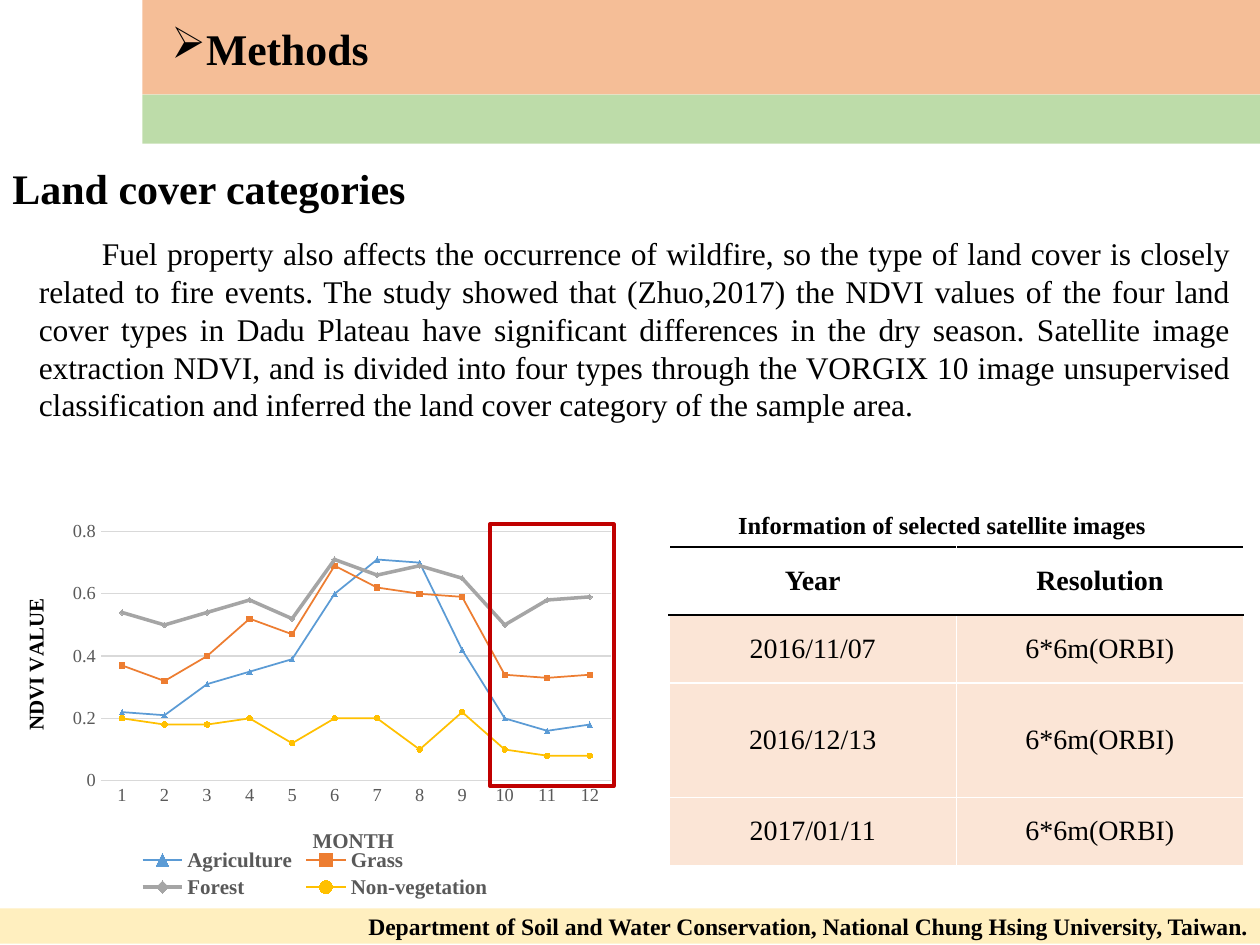
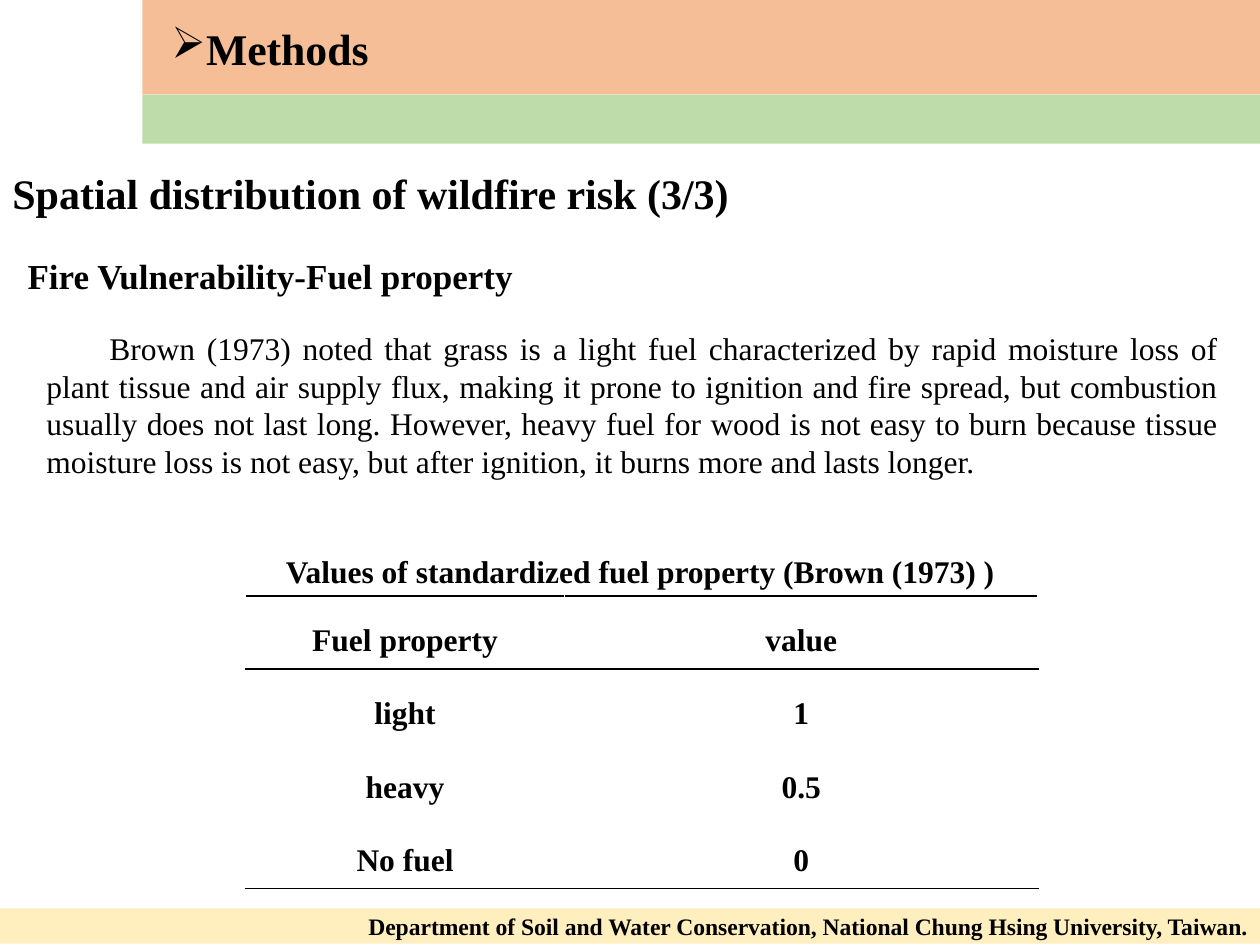
from pptx import Presentation
from pptx.chart.data import CategoryChartData
from pptx.dml.color import RGBColor
from pptx.enum.chart import XL_CHART_TYPE, XL_LEGEND_POSITION, XL_MARKER_STYLE, XL_TICK_MARK
from pptx.enum.shapes import MSO_SHAPE
from pptx.enum.text import MSO_ANCHOR, MSO_AUTO_SIZE, PP_ALIGN
from pptx.oxml.ns import qn
from pptx.oxml.xmlchemy import OxmlElement
from pptx.util import Inches, Pt

FONT = "Times New Roman"
BLACK = RGBColor(0x00, 0x00, 0x00)
WHITE = RGBColor(0xFF, 0xFF, 0xFF)
ORANGE = RGBColor(0xF4, 0xB1, 0x83)
GREEN = RGBColor(0xA9, 0xD1, 0x8E)
YELLOW = RGBColor(0xFF, 0xE6, 0x99)
PEACH = RGBColor(0xFB, 0xE5, 0xD6)
RED = RGBColor(0xC0, 0x00, 0x00)
GRAY = RGBColor(0x59, 0x59, 0x59)
LIGHT_GRAY = RGBColor(0xD9, 0xD9, 0xD9)

LEFT, RIGHT, CENTER, JUSTIFY = PP_ALIGN.LEFT, PP_ALIGN.RIGHT, PP_ALIGN.CENTER, PP_ALIGN.JUSTIFY
MIDDLE = MSO_ANCHOR.MIDDLE
RECTANGLE = MSO_SHAPE.RECTANGLE
NO_TICKS = XL_TICK_MARK.NONE
TITLE_ONLY = 5

# box (inches), colour, opacity (percent)
BANDS = [
    ((1.13, 0, 8.87, 0.75), ORANGE, 83),
    ((1.13, 0.75, 8.87, 0.39), GREEN, 76),
    ((0, 7.21, 10, 0.28), YELLOW, 62),
]
FOOTER = "Department of Soil and Water Conservation, National Chung Hsing University, Taiwan."

# name, monthly values, colour, line width (points), marker
NDVI_SERIES = [
    ("Agriculture", (0.22, 0.21, 0.31, 0.35, 0.39, 0.6, 0.71, 0.7, 0.42, 0.2, 0.16, 0.18),
     RGBColor(0x5B, 0x9B, 0xD5), 1, XL_MARKER_STYLE.TRIANGLE),
    ("Grass", (0.37, 0.32, 0.4, 0.52, 0.47, 0.69, 0.62, 0.6, 0.59, 0.34, 0.33, 0.34),
     RGBColor(0xED, 0x7D, 0x31), 1, XL_MARKER_STYLE.SQUARE),
    ("Forest", (0.54, 0.5, 0.54, 0.58, 0.52, 0.71, 0.66, 0.69, 0.65, 0.5, 0.58, 0.59),
     RGBColor(0xA5, 0xA5, 0xA5), 2, XL_MARKER_STYLE.DIAMOND),
    ("Non-vegetation", (0.2, 0.18, 0.18, 0.2, 0.12, 0.2, 0.2, 0.1, 0.22, 0.1, 0.08, 0.08),
     RGBColor(0xFF, 0xC0, 0x00), 1, XL_MARKER_STYLE.CIRCLE),
]

IMAGE_ROWS = [
    ("Year", "Resolution"),
    ("2016/11/07", "6*6m(ORBI)"),
    ("2016/12/13", "6*6m(ORBI)"),
    ("2017/01/11", "6*6m(ORBI)"),
]
FUEL_ROWS = [("Fuel property", "value"), ("light", "1"), ("heavy", "0.5"), ("No fuel", "0")]

LAND_COVER_TEXT = (
    "Fuel property also affects the occurrence of wildfire, so the type of land cover is closely "
    "related to fire events. The study showed that (Zhuo,2017) the NDVI values of the four land "
    "cover types in Dadu Plateau have significant differences in the dry season. Satellite image "
    "extraction NDVI, and is divided into four types through the VORGIX 10 image unsupervised "
    "classification and inferred the land cover category of the sample area."
)
FUEL_TEXT = (
    "Brown (1973) noted that grass is a light fuel characterized by rapid moisture loss of plant "
    "tissue and air supply flux, making it prone to ignition and fire spread, but combustion "
    "usually does not last long. However, heavy fuel for wood is not easy to burn because tissue "
    "moisture loss is not easy, but after ignition, it burns more and lasts longer."
)


def inches(box):
    return [Inches(value) for value in box]


def style_font(font, size, bold=False, color=BLACK):
    font.name = FONT
    font.size = Pt(size)
    font.bold = bold
    font.color.rgb = color


def add_text(slide, box, text, size, bold=True, align=LEFT):
    shape = slide.shapes.add_textbox(*inches(box))
    shape.text_frame.word_wrap = True
    shape.text_frame.text = text
    paragraph = shape.text_frame.paragraphs[0]
    paragraph.alignment = align
    style_font(paragraph.runs[0].font, size, bold)
    return shape


def add_body_text(slide, box, text):
    """Add a justified paragraph with an indented first line."""
    shape = add_text(slide, box, text, 18, bold=False, align=JUSTIFY)
    properties = shape.text_frame.paragraphs[0]._p.get_or_add_pPr()
    properties.set("indent", str(Inches(0.5)))


def add_band(slide, box, color, opacity):
    band = slide.shapes.add_shape(RECTANGLE, *inches(box))
    band.shadow.inherit = False
    band.fill.solid()
    band.fill.fore_color.rgb = color
    band.line.fill.background()
    alpha = OxmlElement("a:alpha")
    alpha.set("val", str(opacity * 1000))
    band.element.spPr.find(".//" + qn("a:srgbClr")).append(alpha)
    return band


def move_frame_to_layout(slide):
    """Make the bands and the footer, and hand them to the slide's layout."""
    frame = [add_band(slide, *band) for band in BANDS]
    frame.append(add_text(slide, (2.62, 7.19, 7.38, 0.33), FOOTER, 13.5, align=RIGHT))
    tree = slide.slide_layout.shapes.element
    for index, shape in enumerate(frame):
        shape.element.nvSpPr.cNvPr.set("id", str(100 + index))
        tree.insert(2 + index, shape.element)


def fill_title(slide, text):
    title = slide.shapes.title
    title.left, title.top, title.width, title.height = inches((1.26, 0.12, 7.57, 0.52))
    frame = title.text_frame
    frame.auto_size = MSO_AUTO_SIZE.NONE
    frame.vertical_anchor = MIDDLE
    frame.text = text
    paragraph = frame.paragraphs[0]
    paragraph.alignment = LEFT
    properties = paragraph._p.get_or_add_pPr()
    properties.set("marL", str(Inches(0.23)))
    properties.set("indent", str(-Inches(0.23)))
    bullet = OxmlElement("a:buChar")
    bullet.set("char", "➢")
    properties.append(bullet)
    style_font(paragraph.runs[0].font, 25, bold=True)


def set_borders(cell, top, bottom):
    """Draw white sides and the given top and bottom lines, 1 point each."""
    properties = cell._tc.get_or_add_tcPr()
    sides = (("L", WHITE), ("R", WHITE), ("T", top), ("B", bottom))
    for index, (side, color) in enumerate(sides):
        line = OxmlElement(f"a:ln{side}")
        line.set("w", str(Pt(1)))
        fill = OxmlElement("a:solidFill")
        rgb = OxmlElement("a:srgbClr")
        rgb.set("val", str(color))
        fill.append(rgb)
        line.append(fill)
        properties.insert(index, line)


def add_ruled_table(slide, left, top, widths, heights, rows, size,
                    body_fill=None, body_bold=False, end_rule=WHITE):
    """Add a table with black rules around its header and a chosen last rule."""
    box = inches((left, top, sum(widths), sum(heights)))
    table = slide.shapes.add_table(len(rows), len(widths), *box).table
    table.first_row = table.horz_banding = False
    for column, width in zip(table.columns, widths):
        column.width = Inches(width)
    rules = [BLACK, BLACK] + [WHITE] * (len(rows) - 2) + [end_rule]
    for row_index, (row, height) in enumerate(zip(rows, heights)):
        table.rows[row_index].height = Inches(height)
        is_header = row_index == 0
        for column_index, text in enumerate(row):
            cell = table.cell(row_index, column_index)
            cell.text = text
            cell.vertical_anchor = MIDDLE
            paragraph = cell.text_frame.paragraphs[0]
            paragraph.alignment = CENTER
            style_font(paragraph.runs[0].font, size, is_header or body_bold)
            if body_fill is None or is_header:
                cell.fill.background()
            else:
                cell.fill.solid()
                cell.fill.fore_color.rgb = body_fill
            set_borders(cell, rules[row_index], rules[row_index + 1])
    return table


def place_in_chart(parent, index, **fractions):
    """Give a chart part a fixed place, in fractions of the chart."""
    layout = parent.find(qn("c:layout"))
    if layout is None:
        layout = OxmlElement("c:layout")
        parent.insert(index, layout)
    manual = OxmlElement("c:manualLayout")
    settings = {"xMode": "edge", "yMode": "edge", **fractions}
    if "w" in fractions:
        settings = {"layoutTarget": "inner", **settings}
    for name, value in settings.items():
        setting = OxmlElement(f"c:{name}")
        setting.set("val", str(value))
        manual.append(setting)
    layout.append(manual)


def style_axis(axis, title, color, x, y):
    axis.major_tick_mark = axis.minor_tick_mark = NO_TICKS
    style_font(axis.tick_labels.font, 10.5, color=GRAY)
    frame = axis.axis_title.text_frame
    frame.text = title
    style_font(frame.paragraphs[0].runs[0].font, 12, True, color)
    place_in_chart(axis.axis_title.element, 1, x=x, y=y)


def style_line(line, color, width):
    line.color.rgb = color
    line.width = Pt(width)


def add_ndvi_chart(slide, box):
    data = CategoryChartData()
    data.categories = [str(month) for month in range(1, 13)]
    for name, values, *_ in NDVI_SERIES:
        data.add_series(name, values)
    chart = slide.shapes.add_chart(XL_CHART_TYPE.LINE_MARKERS, *inches(box), data).chart
    style_font(chart.font, 12)
    chart.has_title = False
    chart.has_legend = True
    chart.legend.position = XL_LEGEND_POSITION.BOTTOM
    chart.legend.include_in_layout = False
    style_font(chart.legend.font, 12, True, GRAY)
    chart.plots[0].vary_by_categories = False

    months, values = chart.category_axis, chart.value_axis
    style_axis(months, "MONTH", GRAY, 0.49, 0.8)
    style_line(months.format.line, LIGHT_GRAY, 0.75)
    style_axis(values, "NDVI VALUE", BLACK, 0.03, 0.22)
    values.axis_title.element.find(".//" + qn("a:bodyPr")).set("rot", "-5400000")
    values.minimum_scale, values.maximum_scale, values.major_unit = 0, 0.8, 0.2
    values.format.line.fill.background()
    style_line(values.major_gridlines.format.line, LIGHT_GRAY, 0.75)
    values.tick_labels.number_format = "General"
    values.tick_labels.number_format_is_linked = False

    for series, (_, _, color, width, marker) in zip(chart.plots[0].series, NDVI_SERIES):
        series.smooth = False
        style_line(series.format.line, color, width)
        series.marker.style = marker
        series.marker.size = 3
        series.marker.format.fill.solid()
        series.marker.format.fill.fore_color.rgb = color
        series.marker.format.line.color.rgb = color
    plot_area = chart.element.find(".//" + qn("c:plotArea"))
    place_in_chart(plot_area, 0, x=0.16, y=0.06, w=0.81, h=0.63)


def add_dry_season_frame(slide, box):
    frame = slide.shapes.add_shape(RECTANGLE, *inches(box))
    frame.shadow.inherit = False
    frame.fill.background()
    style_line(frame.line, RED, 2.25)


def build_land_cover_slide(slide):
    fill_title(slide, "Methods")
    add_text(slide, (0, 1.24, 3.6, 0.5), "Land cover categories", 24)
    add_ndvi_chart(slide, (0, 4.03, 5, 3.14))
    add_body_text(slide, (0.21, 1.81, 9.66, 1.62), LAND_COVER_TEXT)
    add_dry_season_frame(slide, (3.89, 4.16, 0.98, 2.08))
    add_ruled_table(slide, 5.31, 4.34, (2.28, 2.28), (0.54, 0.54, 0.91, 0.54),
                    IMAGE_ROWS, 16, body_fill=PEACH)
    add_text(slide, (5.76, 4, 4.11, 0.34), "Information of selected satellite images", 14)


def build_fuel_slide(slide):
    fill_title(slide, "Methods")
    add_text(slide, (0, 1.28, 6.2, 0.5), "Spatial distribution of wildfire risk (3/3)", 24)
    add_text(slide, (0.12, 1.97, 5.82, 0.44), "Fire Vulnerability-Fuel property", 20)
    add_body_text(slide, (0.27, 2.56, 9.5, 1.31), FUEL_TEXT)
    table = add_ruled_table(slide, 1.95, 4.73, (2.53, 3.76), [0.58] * 4, FUEL_ROWS, 18,
                            body_bold=True, end_rule=BLACK)
    for cell in table.iter_cells():
        cell.margin_left = cell.margin_right = Inches(0.07)
        cell.margin_top = cell.margin_bottom = 0
        cell.text_frame.paragraphs[0].line_spacing = 1.5
    add_text(slide, (2.17, 4.33, 6.81, 0.4),
             "Values of standardized fuel property (Brown (1973) )", 18)


def main():
    presentation = Presentation()
    presentation.slide_width, presentation.slide_height = Inches(10), Inches(7.5)
    layout = presentation.slide_layouts[TITLE_ONLY]
    land_cover, fuel = [presentation.slides.add_slide(layout) for _ in range(2)]
    move_frame_to_layout(land_cover)
    build_land_cover_slide(land_cover)
    build_fuel_slide(fuel)
    presentation.save("out.pptx")


if __name__ == "__main__":
    main()
